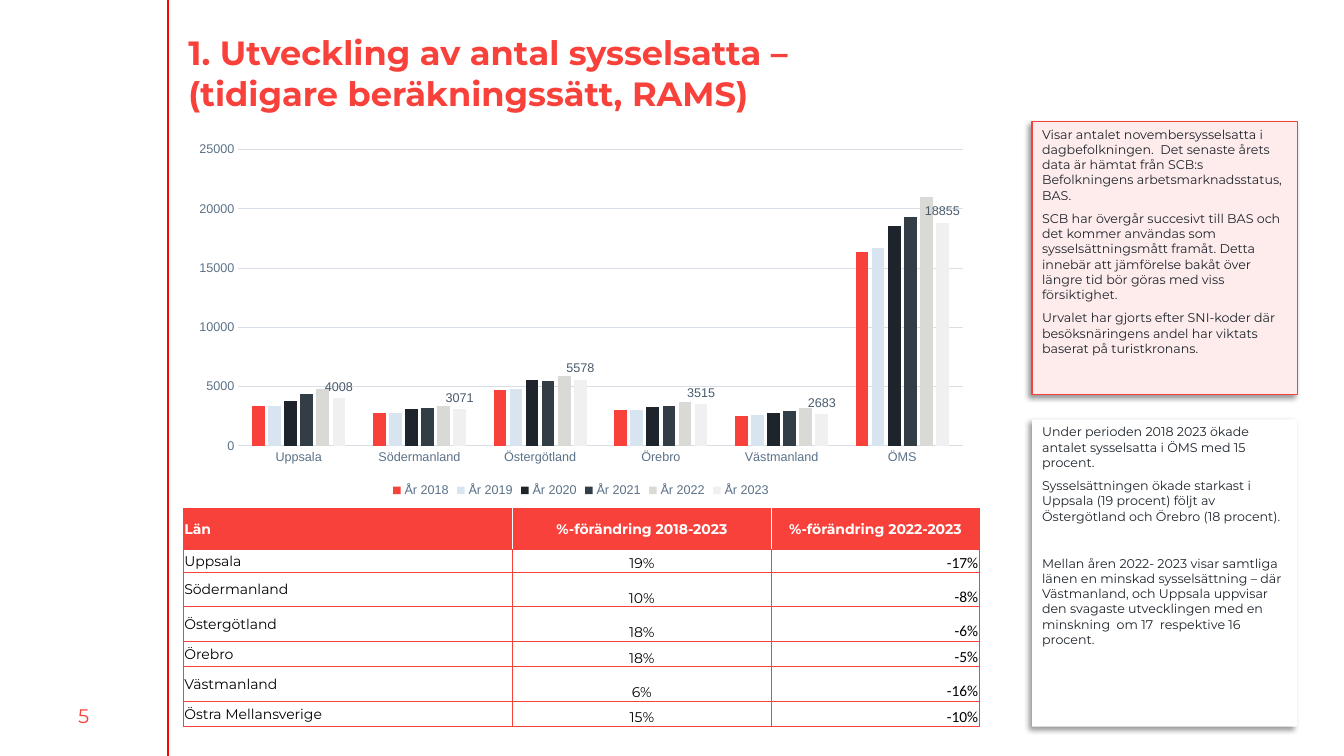
"""Build a slide on employment per county with a chart, a table and two notes."""
import pptx
import pptx.chart.data
import pptx.dml.color
import pptx.enum.chart
import pptx.enum.shapes
import pptx.enum.text
import pptx.oxml
import pptx.oxml.ns
import pptx.util

Pt = pptx.util.Pt
RGB = pptx.dml.color.RGBColor.from_string
ALIGN = pptx.enum.text.PP_ALIGN
ANCHOR = pptx.enum.text.MSO_ANCHOR
NS = pptx.oxml.ns.nsdecls("a")
C = {"red": "F8413A", "rule": "FF0000", "pink": "FEECEC", "white": "FFFFFF",
     "black": "000000", "ink": "1D242B", "axis": "5B7187", "grid": "D8DEE5",
     "label": "495B6C", "ice": "D8E5F0", "slate": "333D46", "stone": "D9D9D6",
     "mist": "F0F0F0"}


def style(font, size, color, name="Montserrat", bold=False):
    font.size, font.name, font.bold = Pt(size), name, bold
    font.color.rgb = RGB(C[color])


def write(p, text, size=10, color="black", name="Montserrat", bold=False,
          align=ALIGN.LEFT, before=0, after=0):
    p.alignment, p.space_before, p.space_after = align, Pt(before), Pt(after)
    r = p.add_run()
    r.text = text
    style(r.font, size, color, name, bold)


prs = pptx.Presentation()
prs.slide_width, prs.slide_height = Pt(960), Pt(540)
s = prs.slides.add_slide(prs.slide_layouts[5])

rule = s.shapes.add_connector(pptx.enum.shapes.MSO_CONNECTOR.STRAIGHT,
                              Pt(120), Pt(0), Pt(120), Pt(540))
rule.line.color.rgb, rule.line.width = RGB(C["rule"]), Pt(0.75)
rule._element.spPr.append(pptx.oxml.parse_xml(f"<a:effectLst {NS}/>"))

number = s.shapes.add_textbox(Pt(0), Pt(497), Pt(119.5), Pt(29))
tf = number.text_frame
tf.word_wrap, tf.vertical_anchor = True, ANCHOR.MIDDLE
write(tf.paragraphs[0], "5", size=14, color="red", align=ALIGN.CENTER)

title = s.shapes.title
title.left, title.top, title.width, title.height = Pt(131), Pt(19.5), Pt(533.5), Pt(49)
tf = title.text_frame
tf.margin_left = tf.margin_right = tf.margin_top = tf.margin_bottom = Pt(3.6)
tf.word_wrap, tf.vertical_anchor = True, ANCHOR.TOP
tf.auto_size = pptx.enum.text.MSO_AUTO_SIZE.NONE
write(tf.paragraphs[0], "1. Utveckling av antal sysselsatta – (tidigare beräkningssätt, RAMS)",
      size=24, color="red", bold=True)

notes = [
    (87, 195, "pink", "red", [
        ("Visar antalet novembersysselsatta i dagbefolkningen.  Det senaste årets data är "
         "hämtat från SCB:s Befolkningens arbetsmarknadsstatus, BAS.", 0),
        ("SCB har övergår succesivt till BAS och det kommer användas som sysselsättningsmått "
         "framåt. Detta innebär att jämförelse bakåt över längre tid bör göras med viss "
         "försiktighet.", 3),
        ("Urvalet har gjorts efter SNI-koder där besöksnäringens andel har viktats baserat på "
         "turistkronans.", 3)]),
    (299.5, 219.5, "white", None, [
        ("Under perioden 2018 2023 ökade antalet sysselsatta i ÖMS med 15 procent.", 0),
        ("Sysselsättningen ökade starkast i Uppsala (19 procent) följt av Östergötland och "
         "Örebro (18 procent).", 3),
        ("Mellan åren 2022- 2023 visar samtliga länen en minskad sysselsättning – där "
         "Västmanland, och Uppsala uppvisar den svagaste utvecklingen med en minskning  om 17  "
         "respektive 16  procent.", 20)]),
]
for top, height, fill, line, paragraphs in notes:
    sp = s.shapes.add_shape(pptx.enum.shapes.MSO_SHAPE.RECTANGLE,
                            Pt(737.3), Pt(top), Pt(189.4), Pt(height))
    sp.fill.solid()
    sp.fill.fore_color.rgb = RGB(C[fill])
    if line:
        sp.line.color.rgb, sp.line.width = RGB(C[line]), Pt(1)
    else:
        sp.line.fill.background()
    sp.shadow.inherit = False
    effects = sp._element.spPr.find(pptx.oxml.ns.qn("a:effectLst"))
    effects.append(pptx.oxml.parse_xml(
        f'<a:outerShdw {NS} blurRad="{Pt(4)}" dist="{Pt(3)}" dir="8100000" rotWithShape="0">'
        f'<a:srgbClr val="{C["black"]}"><a:alpha val="40000"/></a:srgbClr></a:outerShdw>'))
    tf = sp.text_frame
    tf.word_wrap, tf.vertical_anchor = True, ANCHOR.TOP
    for i, (text, before) in enumerate(paragraphs):
        p = tf.add_paragraph() if i else tf.paragraphs[0]
        write(p, text, size=9, color="ink", before=before, after=3)

rows = [
    ("Län", "%-förändring 2018-2023", "%-förändring 2022-2023"),
    ("Uppsala", "19%", "-17%"),
    ("Södermanland", "10%", "-8%"),
    ("Östergötland", "18%", "-6%"),
    ("Örebro", "18%", "-5%"),
    ("Västmanland", "6%", "-16%"),
    ("Östra Mellansverige", "15%", "-10%"),
]
table = s.shapes.add_table(len(rows), 3, Pt(131), Pt(363.3), Pt(568.5), Pt(155.5)).table
for column, width in zip(table.columns, [235, 185, 148.5]):
    column.width = Pt(width)
for row, height in zip(table.rows, [29, 16.5, 24.5, 24.5, 18.5, 24.5, 18]):
    row.height = Pt(height)
for i, row in enumerate(rows):
    for j, text in enumerate(row):
        head = i == 0
        cell = table.cell(i, j)
        cell.margin_left = cell.margin_right = cell.margin_top = Pt(0.7)
        cell.margin_bottom = Pt(0)
        cell.vertical_anchor = ANCHOR.MIDDLE if head or j == 0 else ANCHOR.BOTTOM
        for side in "LRTB":
            inner = head and (side == "L" and j > 0 or side == "R" and j < 2)
            color = C["white" if inner else "red"]
            cell._tc.get_or_add_tcPr().append(pptx.oxml.parse_xml(
                f'<a:ln{side} {NS} w="{Pt(0.5)}"><a:solidFill><a:srgbClr val="{color}"/>'
                f'</a:solidFill></a:ln{side}>'))
        if head:
            cell.fill.solid()
            cell.fill.fore_color.rgb = RGB(C["red"])
        else:
            cell.fill.background()
        change = j == 2 and not head
        write(cell.text_frame.paragraphs[0], text, size=11 if change else 10,
              color="white" if head else "black", name="Calibri" if change else "Montserrat",
              bold=head,
              align=ALIGN.RIGHT if change else ALIGN.CENTER if j else ALIGN.LEFT)

series = [
    ("År 2018", "red", [3400, 2800, 4700, 3000, 2500, 16400]),
    ("År 2019", "ice", [3400, 2800, 4800, 3000, 2600, 16700]),
    ("År 2020", "ink", [3800, 3100, 5600, 3300, 2800, 18600]),
    ("År 2021", "slate", [4400, 3200, 5500, 3400, 2900, 19300]),
    ("År 2022", "stone", [4800, 3400, 5900, 3700, 3200, 21000]),
    ("År 2023", "mist", [4008, 3071, 5578, 3515, 2683, 18855]),
]
data = pptx.chart.data.CategoryChartData(number_format="0")
data.categories = ["Uppsala", "Södermanland", "Östergötland", "Örebro", "Västmanland", "ÖMS"]
for name, color, values in series:
    data.add_series(name, values)
chart = s.shapes.add_chart(pptx.enum.chart.XL_CHART_TYPE.COLUMN_CLUSTERED,
                           Pt(131), Pt(96.5), Pt(568), Pt(262), data).chart
chart.has_title = False
style(chart.font, 10, "ink", "Arial")
chart.has_legend = True
chart.legend.position = pptx.enum.chart.XL_LEGEND_POSITION.BOTTOM
chart.legend.include_in_layout = False
style(chart.legend.font, 9, "axis", "Arial")
plot = chart.plots[0]
plot.gap_width, plot.overlap, plot.vary_by_categories = 219, -27, False
for bars, (name, color, values) in zip(plot.series, series):
    bars.format.fill.solid()
    bars.format.fill.fore_color.rgb = RGB(C[color])
    bars.invert_if_negative = False
labels = plot.series[5].data_labels
labels.show_value = True
labels.position = pptx.enum.chart.XL_LABEL_POSITION.OUTSIDE_END
labels.number_format, labels.number_format_is_linked = "0", False
style(labels.font, 9, "label", "Arial")

cats, vals = chart.category_axis, chart.value_axis
for axis in (cats, vals):
    axis.major_tick_mark = axis.minor_tick_mark = pptx.enum.chart.XL_TICK_MARK.NONE
    style(axis.tick_labels.font, 9, "axis", "Arial")
vals.minimum_scale, vals.maximum_scale, vals.major_unit = 0, 25000, 5000
vals.tick_labels.number_format, vals.tick_labels.number_format_is_linked = "0", False
vals.format.line.fill.background()
for line in (cats.format.line, vals.major_gridlines.format.line):
    line.color.rgb, line.width = RGB(C["grid"]), Pt(0.75)

prs.save("out.pptx")
